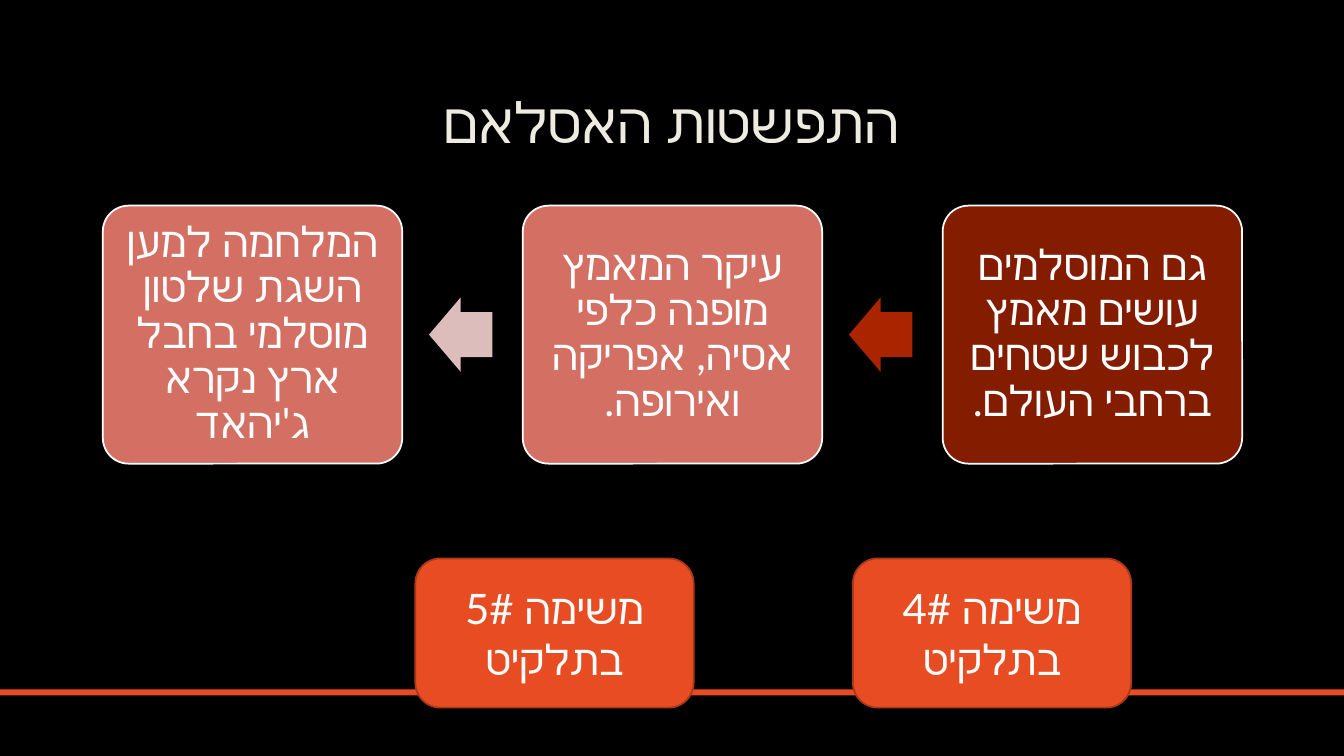
from pptx import Presentation
from pptx.dml.color import RGBColor
from pptx.enum.shapes import MSO_SHAPE
from pptx.enum.text import MSO_ANCHOR, PP_ALIGN
from pptx.oxml.ns import qn
from pptx.util import Inches, Pt
from lxml import etree

ROUNDED, BAR, ARROW = (MSO_SHAPE.ROUNDED_RECTANGLE, MSO_SHAPE.RECTANGLE,
                       MSO_SHAPE.LEFT_ARROW)
MIDDLE, CENTER = MSO_ANCHOR.MIDDLE, PP_ALIGN.CENTER

THEME = dict(
    font="Lato", title_size=40, body_size=30, line_width=1.25,
    background="000000", title="EEECE1", text="FFFFFF",
    accent="E84C22", accent_line="AC3819",
    card_fills=("841C00", "D37063", "D37063"),
    arrow_fills=("AA2400", "DDBDBC"),
)

# Grid, in inches: columns run from right to left
WIDTH, HEIGHT = 13.33, 7.5
CARD_X, CARD_Y, CARD_W, CARD_H, CARD_STEP = 9.35, 2.04, 2.97, 2.56, 4.165
ARROW_W, ARROW_H, ARROW_GAP = 0.63, 0.74, 0.3
TASK_X, TASK_Y, TASK_W, TASK_H, TASK_STEP = 8.46, 5.54, 2.76, 1.48, 4.34

prs = Presentation()
prs.slide_width, prs.slide_height = Inches(WIDTH), Inches(HEIGHT)
s = prs.slides.add_slide(prs.slide_layouts[6])
s.background.fill.solid()
s.background.fill.fore_color.rgb = RGBColor.from_string(THEME["background"])


def add_block(kind, x, y, w, h, fill, line=None):
    sp = s.shapes.add_shape(kind, Inches(x), Inches(y), Inches(w), Inches(h))
    sp.shadow.inherit = False
    sp.fill.solid()
    sp.fill.fore_color.rgb = RGBColor.from_string(fill)
    if line:
        sp.line.color.rgb = RGBColor.from_string(line)
        sp.line.width = Pt(THEME["line_width"])
    else:
        sp.line.fill.background()
    return sp


def write(sp, text, size=THEME["body_size"], color=THEME["text"],
          rtl=True, spacing=None, inset=None):
    tf = sp.text_frame
    tf.word_wrap = True
    tf.vertical_anchor = MIDDLE
    if inset is not None:
        tf.margin_left = tf.margin_right = Inches(inset)
        tf.margin_top = tf.margin_bottom = Inches(inset)
    p = tf.paragraphs[0]
    p.alignment = CENTER
    if spacing:
        p.line_spacing = spacing
    if rtl:
        p._p.get_or_add_pPr().set("rtl", "1")
    r = p.add_run()
    r.text = text
    r.font.size = Pt(size)
    r.font.name = THEME["font"]
    r.font.color.rgb = RGBColor.from_string(color)
    # Hebrew takes its typeface from the complex-script entry
    etree.SubElement(r._r.get_or_add_rPr(), qn("a:cs"), typeface=THEME["font"])


# Bottom stripe
add_block(BAR, 0, 6.84, WIDTH, 0.06, THEME["accent"])

# Title
title = s.shapes.add_textbox(Inches(1), Inches(0.67), Inches(11.32), Inches(1.06))
write(title, "התפשטות האסלאם", size=THEME["title_size"], color=THEME["title"])

# Process cards
cards = (
    "גם המוסלמים עושים מאמץ לכבוש שטחים ברחבי העולם.",
    "עיקר המאמץ מופנה כלפי אסיה, אפריקה ואירופה.",
    "המלחמה למען השגת שלטון מוסלמי בחבל ארץ נקרא ג'יהאד",
)
for i, (text, fill) in enumerate(zip(cards, THEME["card_fills"])):
    card = add_block(ROUNDED, CARD_X - i * CARD_STEP, CARD_Y, CARD_W, CARD_H,
                     fill, THEME["text"])
    card.adjustments[0] = 0.1
    write(card, text, spacing=0.9, inset=0.12)

# Arrows between the cards
for i, fill in enumerate(THEME["arrow_fills"]):
    arrow = add_block(ARROW, CARD_X - i * CARD_STEP - ARROW_GAP - ARROW_W,
                      CARD_Y + (CARD_H - ARROW_H) / 2, ARROW_W, ARROW_H, fill)
    arrow.adjustments[0] = 0.6
    arrow.adjustments[1] = 0.5

# Task buttons
for i, text in enumerate(("משימה 4# בתלקיט", "משימה 5# בתלקיט")):
    task = add_block(ROUNDED, TASK_X - i * TASK_STEP, TASK_Y, TASK_W, TASK_H,
                     THEME["accent"], THEME["accent_line"])
    write(task, text, rtl=False)

prs.save("out.pptx")
